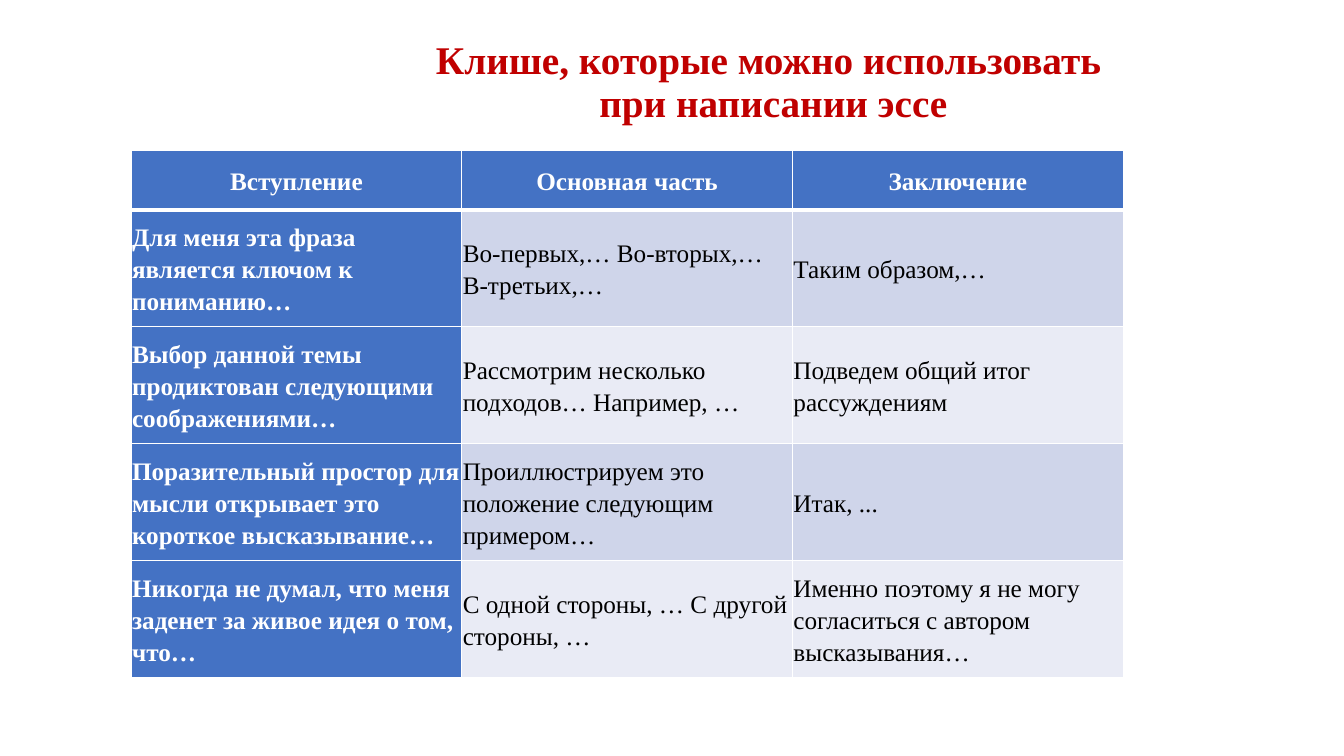
from dataclasses import dataclass

from lxml.etree import SubElement
from pptx import Presentation
from pptx.dml.color import RGBColor
from pptx.enum.text import MSO_ANCHOR as Anchor, PP_ALIGN as Align
from pptx.oxml.ns import qn
from pptx.table import _Cell as Cell
from pptx.text.text import TextFrame
from pptx.util import Emu, Pt

EMU_PER_PX = 9144


@dataclass(frozen=True)
class Theme:
    font: str = "Times New Roman"
    title: str = "C00000"
    header: str = "4472C4"
    bands: tuple[str, str] = ("CFD5EA", "E9EBF5")
    light: str = "FFFFFF"
    dark: str = "000000"
    title_size: int = 28
    cell_size: int = 18
    thin: int = 1
    thick: int = 3


@dataclass(frozen=True)
class TextStyle:
    size: int
    color: str
    bold: bool
    align: Align
    spacing: float


@dataclass(frozen=True)
class Area:
    left: int
    top: int
    width: int
    height: int

    def emu(self) -> list[Emu]:
        return [px(self.left), px(self.top), px(self.width), px(self.height)]


THEME = Theme()
TITLE_STYLE = TextStyle(THEME.title_size, THEME.title, True, Align.CENTER, 0.9)
HEADER_STYLE = TextStyle(THEME.cell_size, THEME.light, True, Align.CENTER, 1.15)
OPENING_STYLE = TextStyle(THEME.cell_size, THEME.light, True, Align.LEFT, 1.15)
BODY_STYLE = TextStyle(THEME.cell_size, THEME.dark, False, Align.LEFT, 1.15)

TITLE = "Клише, которые можно использовать \vпри написании эссе"
ROWS = [
    ("Вступление", "Основная часть", "Заключение"),
    ("Для меня эта фраза является ключом к пониманию…",
     "Во-первых,… Во-вторых,… В-третьих,…",
     "Таким образом,…"),
    ("Выбор данной темы продиктован следующими соображениями…",
     "Рассмотрим несколько подходов… Например, …",
     "Подведем общий итог рассуждениям"),
    ("Поразительный простор для мысли открывает это короткое высказывание…",
     "Проиллюстрируем это положение следующим примером…",
     "Итак, ..."),
    ("Никогда не думал, что меня заденет за живое идея о том, что…",
     "С одной стороны, … С другой стороны, …",
     "Именно поэтому я не могу согласиться с автором высказывания…"),
]
COLUMN_WIDTH, HEADER_HEIGHT, ROW_HEIGHT, CELL_MARGIN = 328, 59, 116, 1
TITLE_AREA = Area(262, 40, 1010, 85)
TABLE_AREA = Area(130, 149, COLUMN_WIDTH * len(ROWS[0]),
                  HEADER_HEIGHT + ROW_HEIGHT * (len(ROWS) - 1))


def px(length: int) -> Emu:
    return Emu(length * EMU_PER_PX)


def write(frame: TextFrame, text: str, style: TextStyle) -> None:
    para = frame.paragraphs[0]
    para.text = text
    para.alignment, para.line_spacing = style.align, style.spacing
    formats = {"name": THEME.font, "size": Pt(style.size), "bold": style.bold}
    for span in para.runs:
        for name, value in formats.items():
            setattr(span.font, name, value)
        span.font.color.rgb = RGBColor.from_string(style.color)


def add_borders(cell: Cell, row: int) -> None:
    widths = {"lnL": THEME.thin, "lnR": THEME.thin,
              "lnT": THEME.thick if row == 1 else THEME.thin,
              "lnB": THEME.thick if row == 0 else THEME.thin}
    properties = cell._tc.get_or_add_tcPr()
    for side, width in widths.items():
        line = SubElement(properties, qn(f"a:{side}"), w=str(Pt(width)))
        fill = SubElement(line, qn("a:solidFill"))
        SubElement(fill, qn("a:srgbClr"), val=THEME.light)


def fill_cell(cell: Cell, text: str, row: int, column: int) -> None:
    if row == 0:
        style, color = HEADER_STYLE, THEME.header
    elif column == 0:
        style, color = OPENING_STYLE, THEME.header
    else:
        style, color = BODY_STYLE, THEME.bands[(row - 1) % 2]
    for side in ("left", "top", "right", "bottom"):
        setattr(cell, f"margin_{side}", px(CELL_MARGIN))
    cell.vertical_anchor = Anchor.MIDDLE
    add_borders(cell, row)
    cell.fill.solid()
    cell.fill.fore_color.rgb = RGBColor.from_string(color)
    write(cell.text_frame, text, style)


def main() -> None:
    """Build the slide of essay phrases and save it."""
    deck = Presentation()
    deck.slide_width, deck.slide_height = px(1333), px(750)
    page = deck.slides.add_slide(deck.slide_layouts[6])

    box = page.shapes.add_textbox(*TITLE_AREA.emu())
    box.text_frame.word_wrap = True
    box.text_frame.vertical_anchor = Anchor.MIDDLE
    write(box.text_frame, TITLE, TITLE_STYLE)

    table = page.shapes.add_table(len(ROWS), len(ROWS[0]), *TABLE_AREA.emu()).table
    table.first_row = table.horz_banding = False
    for column in table.columns:
        column.width = px(COLUMN_WIDTH)
    for index, texts in enumerate(ROWS):
        table.rows[index].height = px(ROW_HEIGHT if index else HEADER_HEIGHT)
        for column, text in enumerate(texts):
            fill_cell(table.cell(index, column), text, index, column)

    deck.save("out.pptx")


if __name__ == "__main__":
    main()
